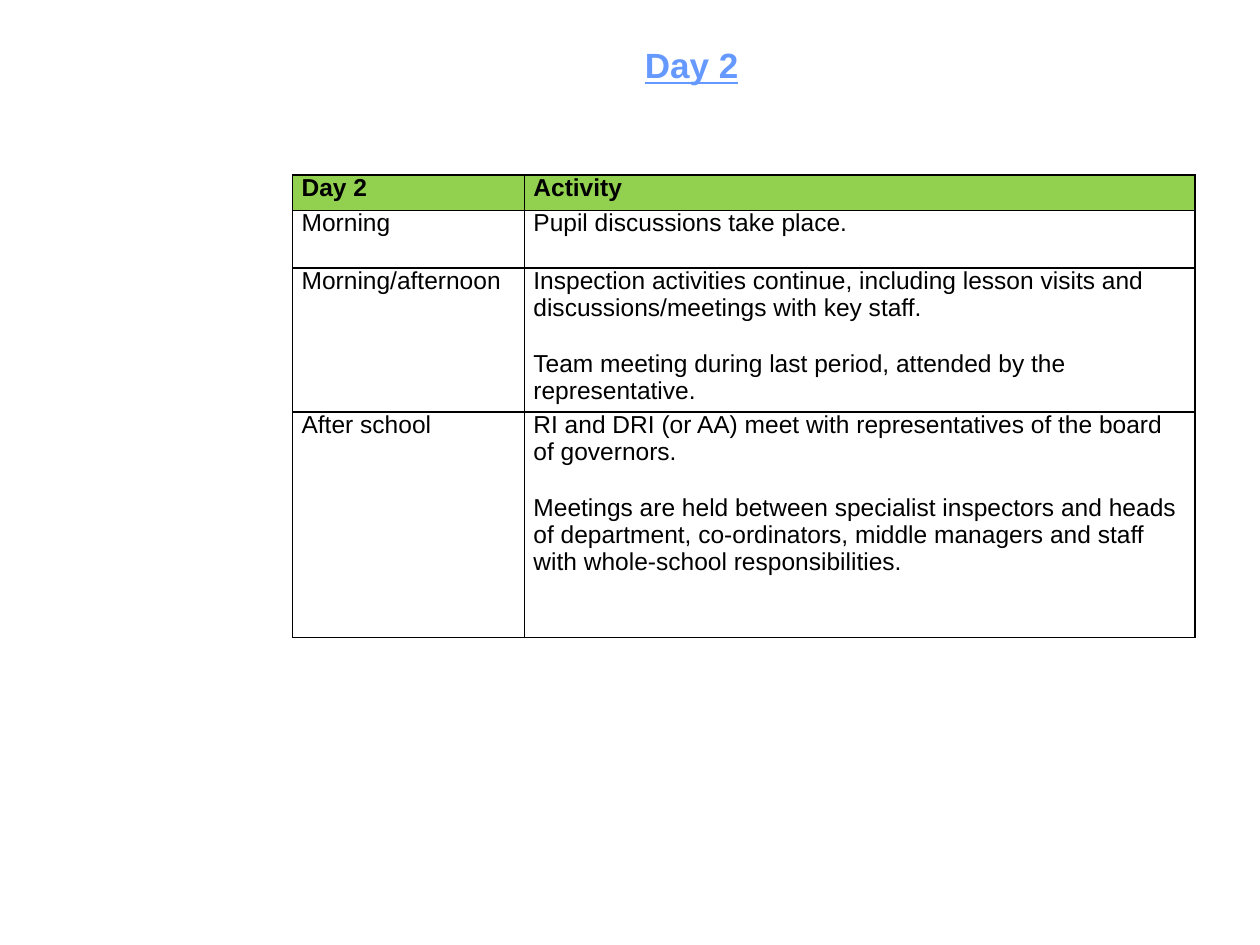
from lxml.etree import SubElement
from pptx import Presentation
from pptx.dml.color import RGBColor
from pptx.enum.text import MSO_ANCHOR, PP_ALIGN
from pptx.oxml.ns import qn
from pptx.util import Cm, Pt

COLORS = {"text": "000000", "title": "6699FF", "header": "92D050", "border": "000000"}
COLUMN_WIDTHS = [1.84 * 2.54, 5.32 * 2.54]
ROW_HEIGHTS = [0.71, 1.16, 2.83, 4.54]
SCHEDULE = [
    ("Day 2", ["Activity"]),
    ("Morning", ["Pupil discussions take place."]),
    ("Morning/afternoon", [
        "Inspection activities continue, including lesson visits and discussions/meetings with key staff.",
        "Team meeting during last period, attended by the representative.",
    ]),
    ("After school", [
        "RI and DRI (or AA) meet with representatives of the board of governors.",
        "Meetings are held between specialist inspectors and heads of department, "
        "co-ordinators, middle managers and staff with whole-school responsibilities.",
    ]),
]


def add_span(para, text, size, color, bold=False):
    span = para.add_run()
    span.text = text
    span.font.name = "Arial"
    span.font.size = Pt(size)
    span.font.bold = bold
    span.font.color.rgb = RGBColor.from_string(COLORS[color])
    return span


def add_borders(cell):
    properties = cell._tc.get_or_add_tcPr()
    for side in ("a:lnL", "a:lnR", "a:lnT", "a:lnB"):
        line = SubElement(properties, qn(side), w=str(Pt(1)))
        fill = SubElement(line, qn("a:solidFill"))
        SubElement(fill, qn("a:srgbClr"), val=COLORS["border"])


deck = Presentation()
deck.slide_width = Cm(25.4)
deck.slide_height = Cm(19.05)
page = deck.slides.add_slide(deck.slide_layouts[6])

title_box = page.shapes.add_textbox(Cm(4.7), Cm(0.33), Cm(18.19), Cm(1.4))
frame = title_box.text_frame
frame.word_wrap = True
frame.vertical_anchor = MSO_ANCHOR.MIDDLE
frame.margin_left, frame.margin_right = Cm(0.3), Cm(0)
frame.margin_top, frame.margin_bottom = Cm(0.55), Cm(0)
title = frame.paragraphs[0]
title.alignment = PP_ALIGN.CENTER
add_span(title, "Day 2", 20, "title", bold=True).font.underline = True

table = page.shapes.add_table(
    len(SCHEDULE), len(COLUMN_WIDTHS), Cm(5.9), Cm(3.53),
    Cm(sum(COLUMN_WIDTHS)), Cm(sum(ROW_HEIGHTS)),
).table
table.horz_banding = False
for column, width in zip(table.columns, COLUMN_WIDTHS):
    column.width = Cm(width)

for row_index, (period, activities) in enumerate(SCHEDULE):
    is_header = row_index == 0
    table.rows[row_index].height = Cm(ROW_HEIGHTS[row_index])
    for column_index, texts in enumerate(([period], activities)):
        cell = table.cell(row_index, column_index)
        cell.margin_left = cell.margin_right = Cm(0.18)
        cell.margin_top = cell.margin_bottom = Cm(0)
        cell.vertical_anchor = MSO_ANCHOR.TOP
        add_borders(cell)
        if is_header:
            cell.fill.solid()
            cell.fill.fore_color.rgb = RGBColor.from_string(COLORS["header"])
        else:
            cell.fill.background()
        for text_index, text in enumerate(texts):
            para = cell.text_frame.paragraphs[0]
            if text_index:
                para = cell.text_frame.add_paragraph()
                para.space_before = Pt(16.5)
            para.line_spacing = 0.98
            add_span(para, text, 14, "text", bold=is_header)

deck.save("out.pptx")
